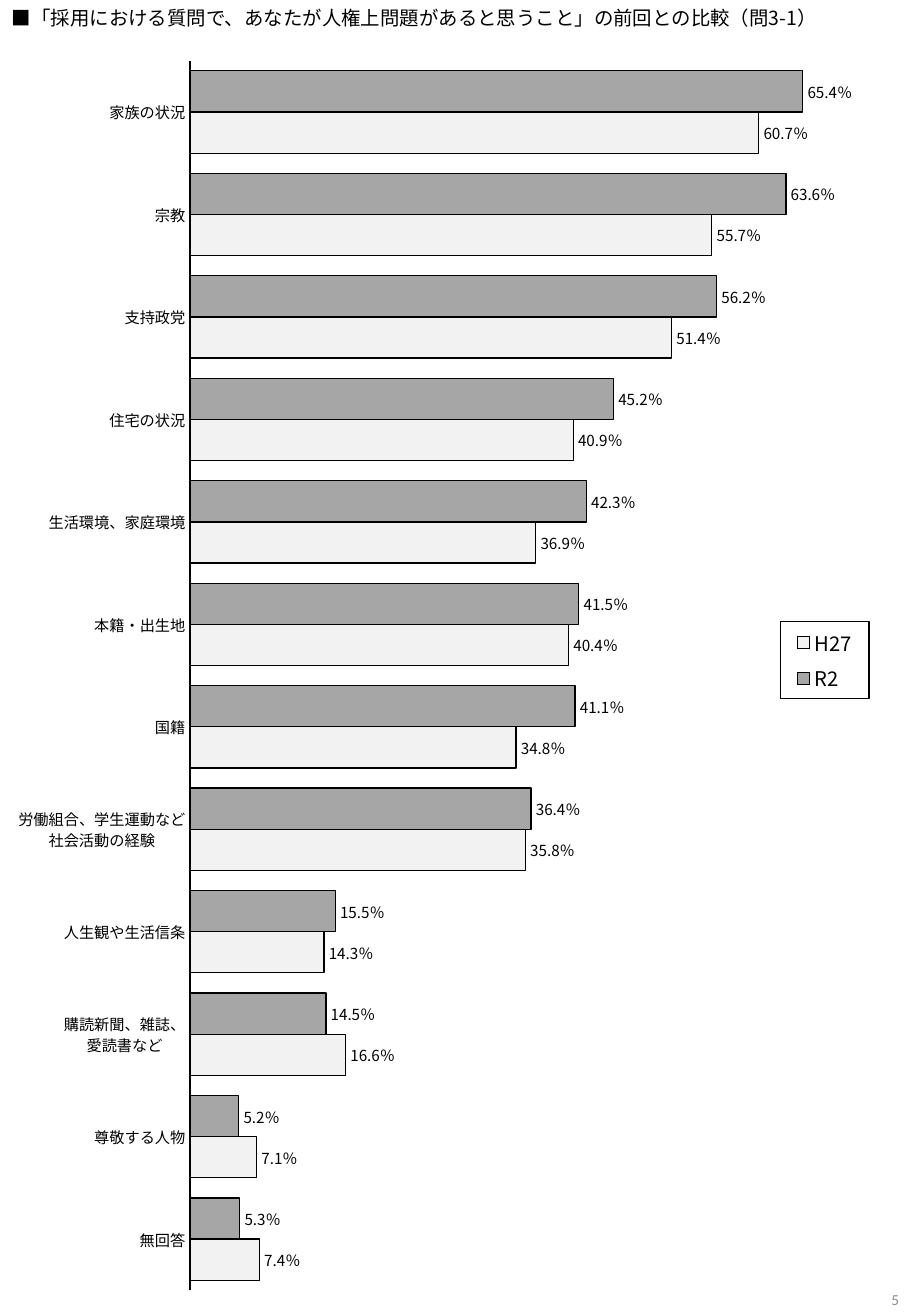
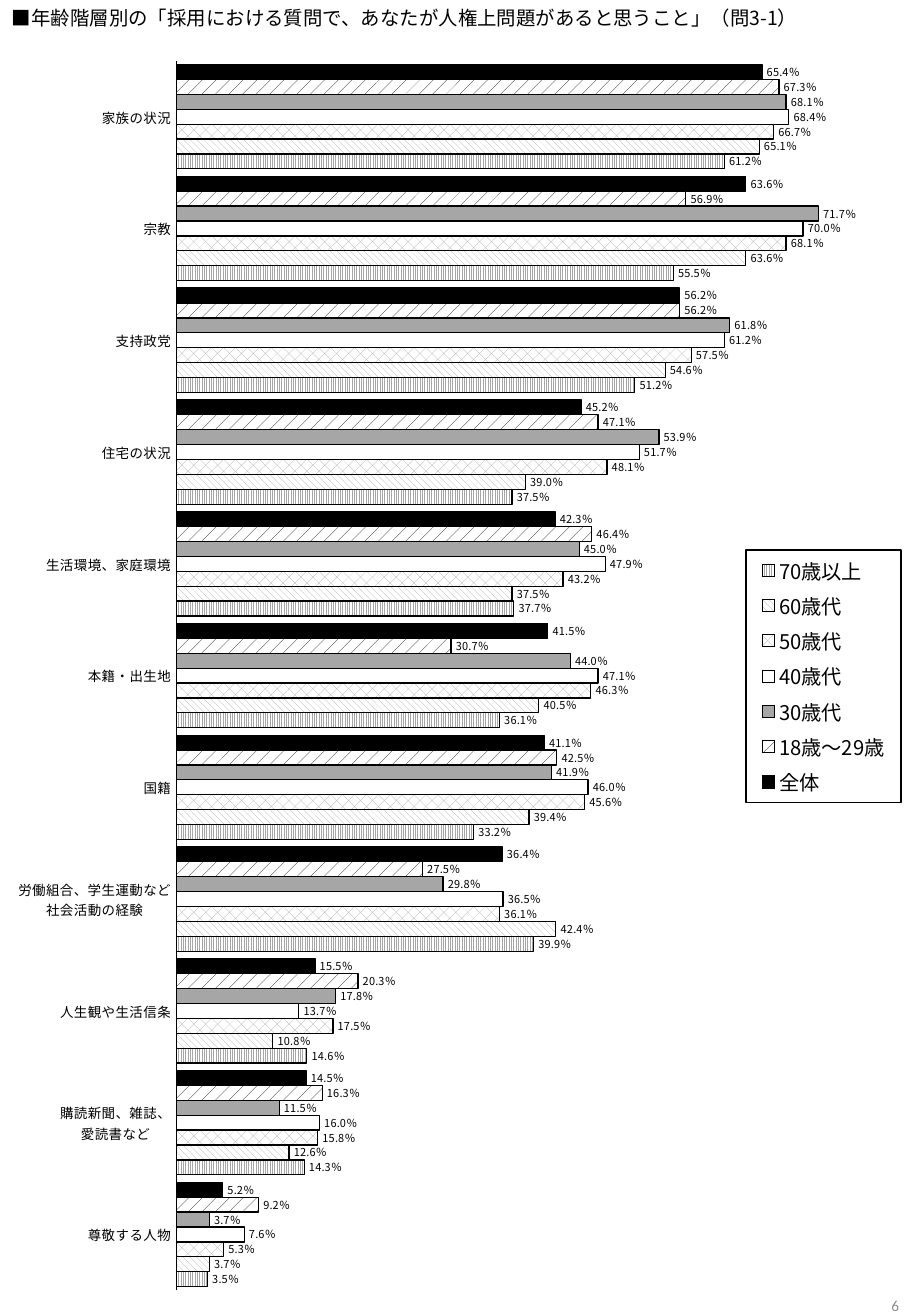
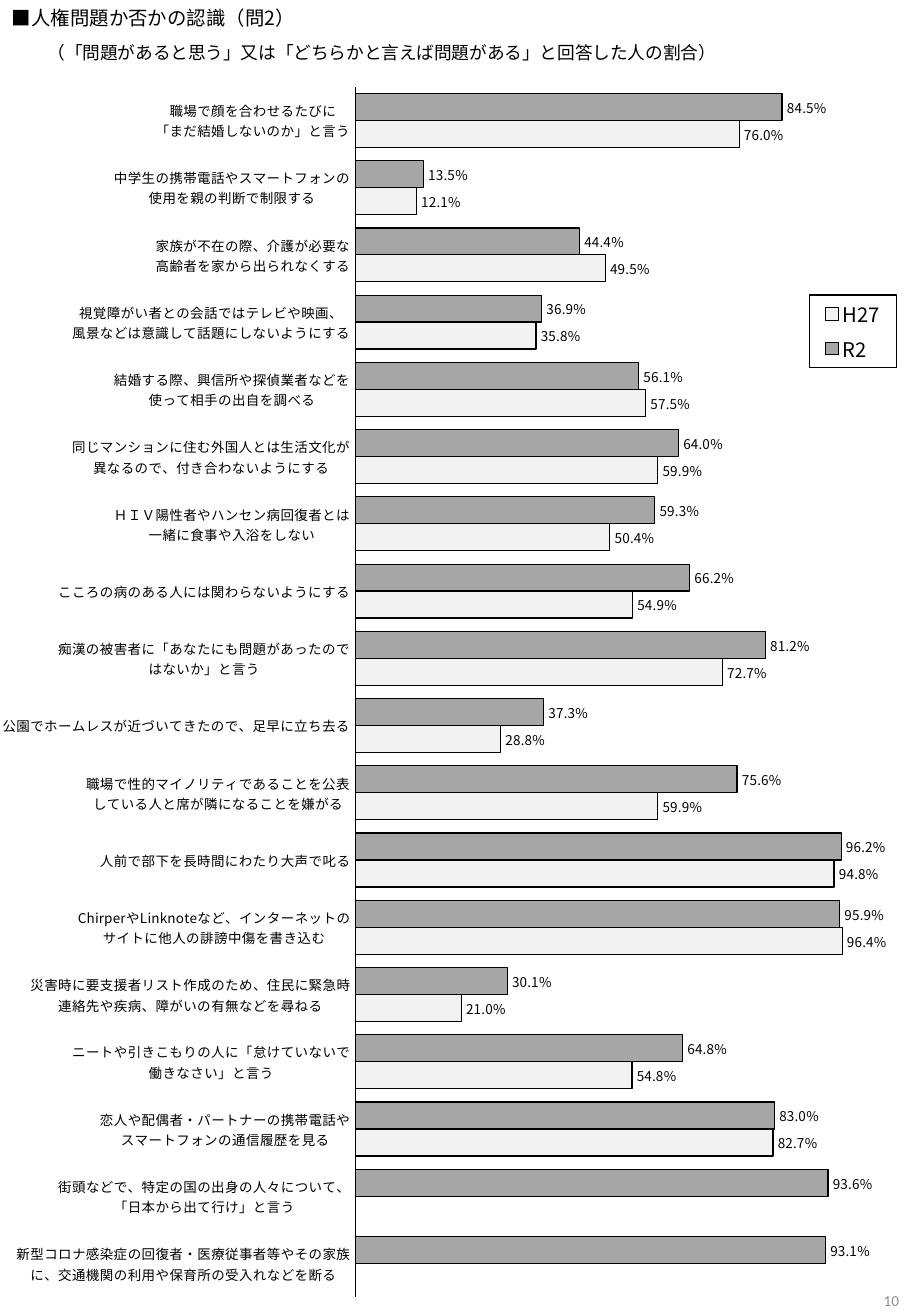
from dataclasses import dataclass
from typing import Optional

import pptx
import pptx.chart.data
import pptx.dml.color
import pptx.enum.chart
import pptx.enum.dml
import pptx.enum.text
import pptx.oxml
import pptx.oxml.ns
import pptx.util

Pt = pptx.util.Pt
qn = pptx.oxml.ns.qn
PATTERN = pptx.enum.dml.MSO_PATTERN

# Shared look
COLORS = {
    "ink": "000000",
    "paper": "FFFFFF",
    "mid": "A6A6A6",
    "light": "F2F2F2",
    "number": "8C8C8C",
}
BODY_FONT = "Noto Sans CJK JP"
NUMBER_FONT = "Calibri"
PAGE_WIDTH, PAGE_HEIGHT = 540, 779.76
LINE_HEIGHT = 20.88
INSET = 7.2
THIN = 0.75


@dataclass
class Frame:
    """A rectangle: points on a page, fractions within a chart."""
    left: float
    top: float
    width: float
    height: float


@dataclass
class Series:
    name: str
    values: list[Optional[float]]
    color: Optional[str]
    pattern: Optional[PATTERN] = None


@dataclass
class BarPage:
    number: int
    number_middle: float
    title: str
    categories: list[str]
    series: list[Series]
    text_size: float
    label_size: float
    label_format: str
    gap: int
    legend: Frame
    subtitle: str = ""
    maximum: Optional[float] = None
    plot: Optional[Frame] = None


def rgb(name: str) -> pptx.dml.color.RGBColor:
    return pptx.dml.color.RGBColor.from_string(COLORS[name])


def style_font(font, size: float, name: str = BODY_FONT, color: str = "ink") -> None:
    font.size = Pt(size)
    font.name = name
    font.color.rgb = rgb(color)


def add_asian_fonts(root) -> None:
    """Give East Asian text the same typeface as Latin text."""
    for latin in list(root.iter(qn("a:latin"))):
        asian = latin.makeelement(qn("a:ea"), {"typeface": latin.get("typeface")})
        latin.addnext(asian)


def draw_text(page, frame: Frame, text: str, size: float, font: str = BODY_FONT,
              color: str = "ink", indent: float = 0,
              align=pptx.enum.text.PP_ALIGN.LEFT) -> None:
    box = page.shapes.add_textbox(Pt(frame.left), Pt(frame.top), Pt(frame.width), Pt(frame.height))
    body = box.text_frame
    body.word_wrap = True
    body.vertical_anchor = pptx.enum.text.MSO_ANCHOR.MIDDLE
    body.margin_left, body.margin_right = Pt(INSET + indent), Pt(INSET)
    body.margin_top = body.margin_bottom = Pt(0)
    para = body.paragraphs[0]
    para.text = text
    para.alignment = align
    style_font(para.font, size, font, color)
    add_asian_fonts(box.element)


def layout_element(frame: Frame, target: str = ""):
    """Build a manual chart layout."""
    return pptx.oxml.parse_xml(
        f'<c:layout {pptx.oxml.ns.nsdecls("c")}><c:manualLayout>{target}'
        '<c:xMode val="edge"/><c:yMode val="edge"/>'
        f'<c:x val="{frame.left}"/><c:y val="{frame.top}"/>'
        f'<c:w val="{frame.width}"/><c:h val="{frame.height}"/>'
        '</c:manualLayout></c:layout>')


def drop_layout(parent) -> None:
    for layout in parent.findall(qn("c:layout")):
        parent.remove(layout)


def style_series(bars, series: Series, label_format: str, size: float) -> None:
    fill = bars.format.fill
    if series.pattern is not None:
        fill.patterned()
        fill.pattern = series.pattern
        fill.fore_color.rgb = rgb(series.color)
        fill.back_color.rgb = rgb("paper")
    elif series.color:
        fill.solid()
        fill.fore_color.rgb = rgb(series.color)
    else:
        fill.background()
    bars.format.line.color.rgb = rgb("ink")
    bars.format.line.width = Pt(THIN)
    labels = bars.data_labels
    labels.show_value = True
    labels.number_format = label_format
    labels.number_format_is_linked = False
    labels.position = pptx.enum.chart.XL_LABEL_POSITION.OUTSIDE_END
    style_font(labels.font, size)


def style_axes(chart, size: float, maximum: Optional[float]) -> None:
    names = chart.category_axis
    names.reverse_order = True
    names.has_major_gridlines = False
    names.major_tick_mark = names.minor_tick_mark = pptx.enum.chart.XL_TICK_MARK.NONE
    names.format.line.color.rgb = rgb("ink")
    names.format.line.width = Pt(THIN)
    style_font(names.tick_labels.font, size)
    scale = chart.value_axis
    scale.has_major_gridlines = False
    scale.visible = False
    if maximum is not None:
        scale.minimum_scale = 0
        scale.maximum_scale = maximum


def style_legend(chart, frame: Frame) -> None:
    chart.has_legend = True
    chart.legend.position = pptx.enum.chart.XL_LEGEND_POSITION.RIGHT
    chart.legend.include_in_layout = True
    style_font(chart.legend.font, 12)
    legend = chart.element.find(".//" + qn("c:legend"))
    drop_layout(legend)
    overlay = legend.find(qn("c:overlay"))
    overlay.addprevious(layout_element(frame))
    overlay.addnext(pptx.oxml.parse_xml(
        f'<c:spPr {pptx.oxml.ns.nsdecls("c", "a")}>'
        f'<a:solidFill><a:srgbClr val="{COLORS["paper"]}"/></a:solidFill>'
        f'<a:ln w="{int(Pt(THIN))}"><a:solidFill><a:srgbClr val="{COLORS["ink"]}"/></a:solidFill></a:ln>'
        '</c:spPr>'))


def draw_chart(page, content: BarPage, top: float) -> None:
    data = pptx.chart.data.CategoryChartData(number_format="0.0")
    data.categories = content.categories
    for series in content.series:
        data.add_series(series.name, series.values)
    chart = page.shapes.add_chart(
        pptx.enum.chart.XL_CHART_TYPE.BAR_CLUSTERED, Pt(0), Pt(top),
        Pt(PAGE_WIDTH), Pt(PAGE_HEIGHT - top), data).chart
    chart.has_title = False
    style_font(chart.font, content.text_size)
    bar_plot = chart.plots[0]
    bar_plot.gap_width = content.gap
    bar_plot.overlap = 0
    bar_plot.vary_by_categories = False
    for bars, series in zip(bar_plot.series, content.series):
        style_series(bars, series, content.label_format, content.label_size)
    style_axes(chart, content.text_size, content.maximum)
    style_legend(chart, content.legend)
    if content.plot:
        area = chart.element.find(".//" + qn("c:plotArea"))
        drop_layout(area)
        area.insert(0, layout_element(content.plot, '<c:layoutTarget val="inner"/>'))
    add_asian_fonts(chart.element)


def draw_page(deck, content: BarPage) -> None:
    page = deck.slides.add_slide(deck.slide_layouts[6])
    top = LINE_HEIGHT
    draw_text(page, Frame(0, 0, PAGE_WIDTH, LINE_HEIGHT), content.title, 11.5)
    if content.subtitle:
        draw_text(page, Frame(0, top, PAGE_WIDTH, LINE_HEIGHT), content.subtitle, 10.5, indent=21)
        top = 41.04
    draw_chart(page, content, top)
    draw_text(page, Frame(418, content.number_middle - 7, 122, 14), str(content.number), 9,
              NUMBER_FONT, "number", align=pptx.enum.text.PP_ALIGN.RIGHT)


# Content
QUESTIONS = [
    "家族の状況", "宗教", "支持政党", "住宅の状況", "生活環境、家庭環境", "本籍・出生地", "国籍",
    "労働組合、学生運動など\n社会活動の経験", "人生観や生活信条", "購読新聞、雑誌、\n愛読書など",
    "尊敬する人物",
]
SITUATIONS = [
    "職場で顔を合わせるたびに\n「まだ結婚しないのか」と言う",
    "中学生の携帯電話やスマートフォンの\n使用を親の判断で制限する",
    "家族が不在の際、介護が必要な\n高齢者を家から出られなくする",
    "視覚障がい者との会話ではテレビや映画、\n風景などは意識して話題にしないようにする",
    "結婚する際、興信所や探偵業者などを\n使って相手の出自を調べる",
    "同じマンションに住む外国人とは生活文化が\n異なるので、付き合わないようにする",
    "ＨＩＶ陽性者やハンセン病回復者とは\n一緒に食事や入浴をしない",
    "こころの病のある人には関わらないようにする",
    "痴漢の被害者に「あなたにも問題があったので\nはないか」と言う",
    "公園でホームレスが近づいてきたので、足早に立ち去る",
    "職場で性的マイノリティであることを公表\nしている人と席が隣になることを嫌がる",
    "人前で部下を長時間にわたり大声で叱る",
    "ChirperやLinknoteなど、インターネットの\nサイトに他人の誹謗中傷を書き込む",
    "災害時に要支援者リスト作成のため、住民に緊急時\n連絡先や疾病、障がいの有無などを尋ねる",
    "ニートや引きこもりの人に「怠けていないで\n働きなさい」と言う",
    "恋人や配偶者・パートナーの携帯電話や\nスマートフォンの通信履歴を見る",
    "街頭などで、特定の国の出身の人々について、\n「日本から出て行け」と言う",
    "新型コロナ感染症の回復者・医療従事者等やその家族\nに、交通機関の利用や保育所の受入れなどを断る",
]
OVERALL = [65.4, 63.6, 56.2, 45.2, 42.3, 41.5, 41.1, 36.4, 15.5, 14.5, 5.2]

PAGES = [
    BarPage(
        number=5, number_middle=769.7,
        title="■「採用における質問で、あなたが人権上問題があると思うこと」の前回との比較（問3-1）",
        categories=QUESTIONS + ["無回答"],
        series=[
            Series("R2", OVERALL + [5.3], "mid"),
            Series("H27", [60.7, 55.7, 51.4, 40.9, 36.9, 40.4, 34.8, 35.8, 14.3, 16.6, 7.1, 7.4], "light"),
        ],
        text_size=9, label_size=9, label_format='0.0"％"', gap=49, maximum=75,
        legend=Frame(0.857, 0.458, 0.097, 0.06),
    ),
    # Seven bars a group: wide bars and small labels keep each value beside its own bar
    BarPage(
        number=6, number_middle=773.3,
        title="■年齢階層別の「採用における質問で、あなたが人権上問題があると思うこと」（問3-1）",
        categories=QUESTIONS,
        series=[
            Series("全体", OVERALL, "ink"),
            Series("18歳～29歳", [67.3, 56.9, 56.2, 47.1, 46.4, 30.7, 42.5, 27.5, 20.3, 16.3, 9.2],
                   "ink", PATTERN.PERCENT_10),
            Series("30歳代", [68.1, 71.7, 61.8, 53.9, 45, 44, 41.9, 29.8, 17.8, 11.5, 3.7], "mid"),
            Series("40歳代", [68.4, 70, 61.2, 51.7, 47.9, 47.1, 46, 36.5, 13.7, 16, 7.6], None),
            Series("50歳代", [66.7, 68.1, 57.5, 48.1, 43.2, 46.3, 45.6, 36.1, 17.5, 15.8, 5.3],
                   "mid", PATTERN.PERCENT_30),
            Series("60歳代", [65.1, 63.6, 54.6, 39, 37.5, 40.5, 39.4, 42.4, 10.8, 12.6, 3.7],
                   "mid", PATTERN.WIDE_DOWNWARD_DIAGONAL),
            Series("70歳以上", [61.2, 55.5, 51.2, 37.5, 37.7, 36.1, 33.2, 39.9, 14.6, 14.3, 3.5],
                   "mid", PATTERN.LIGHT_VERTICAL),
        ],
        text_size=8, label_size=6.5, label_format='0.0"％"', gap=50,
        legend=Frame(0.819, 0.402, 0.17, 0.197),
    ),
    BarPage(
        number=10, number_middle=770.4,
        title="■人権問題か否かの認識（問2）",
        subtitle="（「問題があると思う」又は「どちらかと言えば問題がある」と回答した人の割合）",
        categories=SITUATIONS,
        series=[
            Series("R2", [84.5, 13.5, 44.4, 36.9, 56.1, 64, 59.3, 66.2, 81.2, 37.3, 75.6, 96.2,
                          95.9, 30.1, 64.8, 83, 93.6, 93.1], "mid"),
            Series("H27", [76, 12.1, 49.5, 35.8, 57.5, 59.9, 50.4, 54.9, 72.7, 28.8, 59.9, 94.8,
                           96.4, 21, 54.8, 82.7, None, None], "light"),
        ],
        text_size=8, label_size=8, label_format='0.0"%"', gap=50, maximum=110,
        legend=Frame(0.889, 0.181, 0.095, 0.058),
        plot=Frame(0.39, 0.014, 0.61, 0.971),
    ),
]


def main() -> None:
    deck = pptx.Presentation()
    deck.slide_width, deck.slide_height = Pt(PAGE_WIDTH), Pt(PAGE_HEIGHT)
    for content in PAGES:
        draw_page(deck, content)
    deck.save("out.pptx")


if __name__ == "__main__":
    main()
